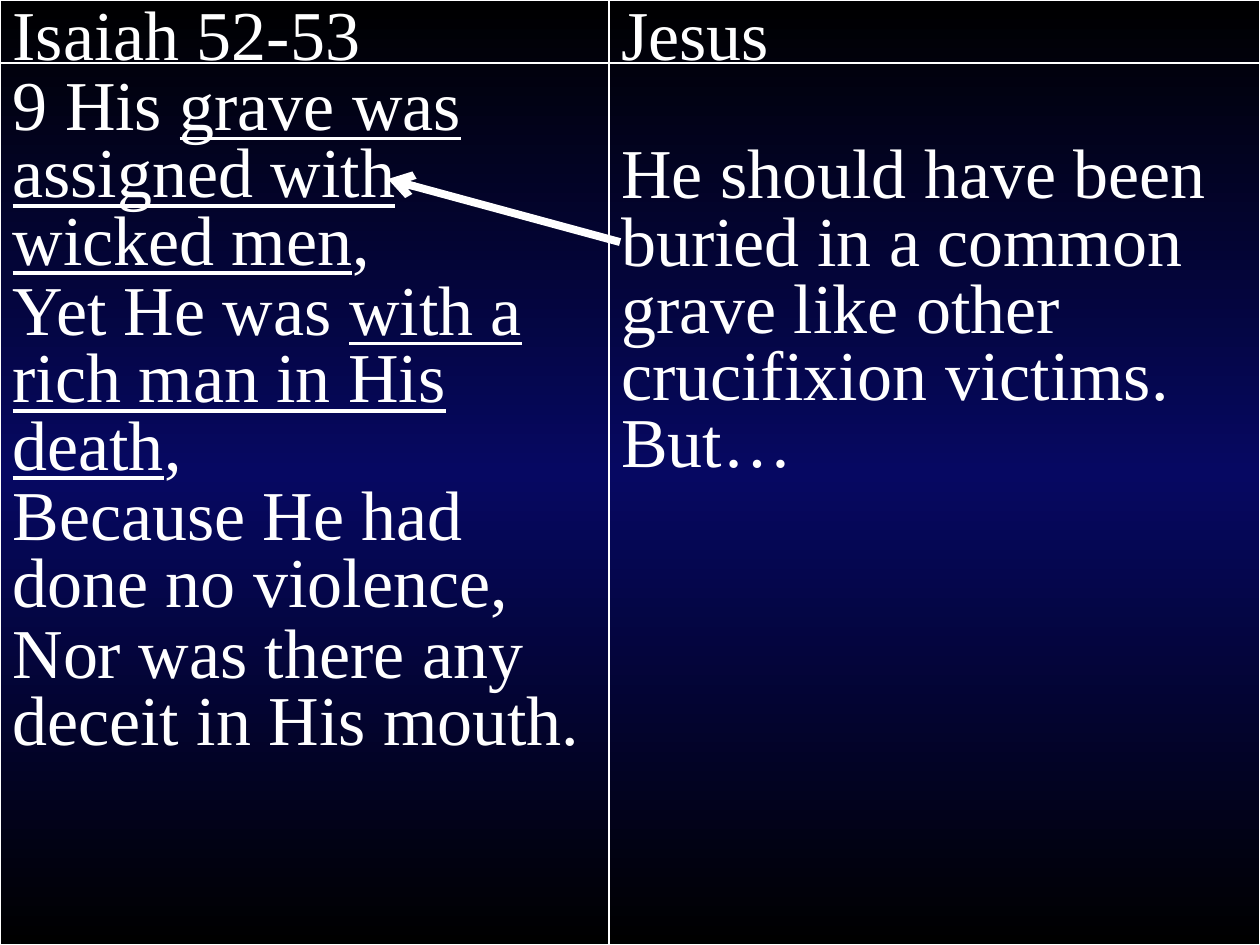
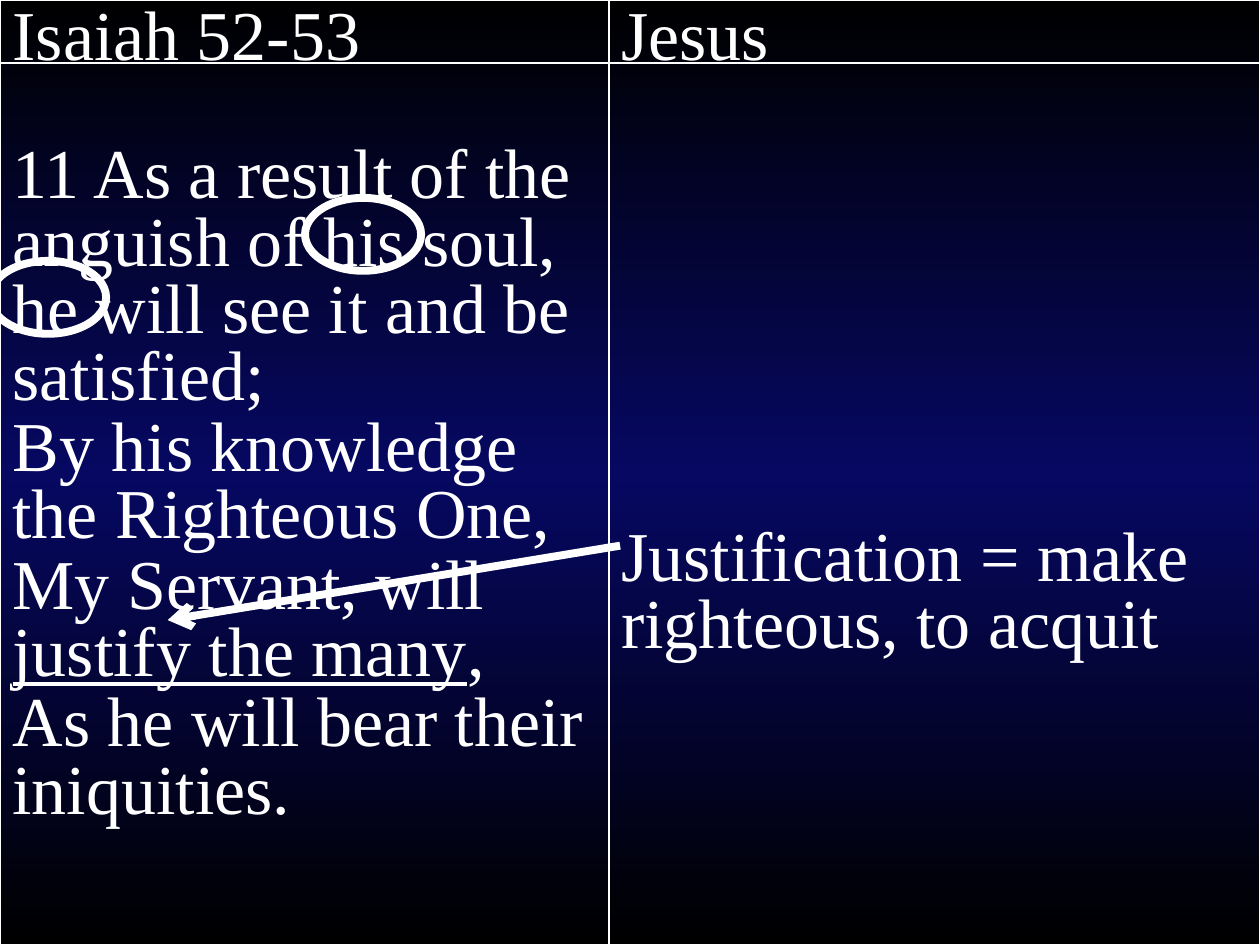
import copy
from dataclasses import dataclass

import lxml.etree
import pptx
import pptx.dml.color
import pptx.enum.shapes
import pptx.enum.text
import pptx.oxml.ns
import pptx.util

Cm = pptx.util.Cm
Pt = pptx.util.Pt
qn = pptx.oxml.ns.qn


@dataclass(frozen=True)
class Theme:
    font: str = "Times New Roman"
    text_size: float = 40
    line_spacing: float = 0.8
    paragraph_gap: float = 2
    line_pitch: float = 36.8
    ink: str = "FFFFFF"
    panel_gradient: tuple = ("000000", "060862", "000000")
    background_gradient: tuple = ("0000F8", "00004A")
    border: float = 1
    rule: float = 1.5
    marker: float = 4.5


THEME = Theme()
SLIDE_WIDTH, SLIDE_HEIGHT = 25.4, 19.05
SCRIPTURE_WIDTH = 12.5
JESUS_LEFT = 12.27
HEADING_RULE_Y = 1.27
CIRCLE_SIZE = (2.34, 1.47)


def rgb(code):
    return pptx.dml.color.RGBColor.from_string(code)


def paint_gradient(fill, owner, colours):
    """Fill from top to bottom with evenly spaced colours; owner is the XML holding the fill."""
    fill.gradient()
    fill.gradient_angle = 270
    stop_list = owner.find(".//" + qn("a:gsLst"))
    while len(stop_list) < len(colours):
        stop_list.append(copy.deepcopy(stop_list[0]))
    for index, (stop, colour) in enumerate(zip(fill.gradient_stops, colours)):
        stop.color.rgb = rgb(colour)
        stop.position = index / (len(colours) - 1)


def style_line(line, width):
    line.color.rgb = rgb(THEME.ink)
    line.width = Pt(width)


def write_paragraph(paragraph, pieces, skipped_lines=0):
    """Write (text, underlined) pieces, leaving room for skipped_lines above."""
    paragraph.alignment = pptx.enum.text.PP_ALIGN.LEFT
    paragraph.line_spacing = THEME.line_spacing
    paragraph.space_before = Pt(THEME.paragraph_gap + skipped_lines * THEME.line_pitch)
    properties = paragraph._p.get_or_add_pPr()
    properties.set("marL", "0")
    properties.set("indent", "0")
    lxml.etree.SubElement(properties, qn("a:buNone"))
    for text, underlined in pieces:
        run = paragraph.add_run()
        run.text = text
        run.font.name = THEME.font
        run.font.size = Pt(THEME.text_size)
        run.font.color.rgb = rgb(THEME.ink)
        run.font.underline = underlined


def fill_panel(panel, left, width, heading, verses, skipped_lines):
    """Turn a body placeholder into a full-height column with a heading."""
    panel.left, panel.top = Cm(left), Cm(0)
    panel.width, panel.height = Cm(width), Cm(SLIDE_HEIGHT)
    paint_gradient(panel.fill, panel.element, THEME.panel_gradient)
    style_line(panel.line, THEME.border)
    frame = panel.text_frame
    frame.word_wrap = True
    frame.auto_size = pptx.enum.text.MSO_AUTO_SIZE.NONE
    frame.vertical_anchor = pptx.enum.text.MSO_ANCHOR.TOP
    write_paragraph(frame.paragraphs[0], [(heading, False)])
    for index, verse in enumerate(verses):
        write_paragraph(frame.add_paragraph(), verse, 0 if index else skipped_lines)


def add_line(slide, start, end, width, arrow=False):
    connector = slide.shapes.add_connector(
        pptx.enum.shapes.MSO_CONNECTOR.STRAIGHT, *map(Cm, start + end))
    style_line(connector.line, width)
    if arrow:
        lxml.etree.SubElement(connector.line._get_or_add_ln(), qn("a:tailEnd"), type="arrow")
    lxml.etree.SubElement(connector._element.spPr, qn("a:effectLst"))


def add_circle(slide, left, top):
    circle = slide.shapes.add_shape(
        pptx.enum.shapes.MSO_SHAPE.OVAL, *map(Cm, (left, top) + CIRCLE_SIZE))
    circle.shadow.inherit = False
    circle.fill.background()
    style_line(circle.line, THEME.marker)


def add_comparison(deck, scripture, fulfilment, scripture_skip=0, fulfilment_skip=0):
    """Add a slide that sets the Isaiah text beside its fulfilment."""
    slide = deck.slides.add_slide(deck.slide_layouts.get_by_name("Two Content"))
    title = slide.shapes.title.element
    title.getparent().remove(title)
    scripture_panel, jesus_panel = slide.placeholders
    fill_panel(scripture_panel, 0, SCRIPTURE_WIDTH, "Isaiah 52-53", scripture, scripture_skip)
    fill_panel(jesus_panel, JESUS_LEFT, SLIDE_WIDTH - JESUS_LEFT, "Jesus",
               fulfilment, fulfilment_skip)
    add_line(slide, (0, HEADING_RULE_Y), (SLIDE_WIDTH, HEADING_RULE_Y), THEME.rule)
    return slide


def main():
    deck = pptx.Presentation()
    deck.slide_width, deck.slide_height = Cm(SLIDE_WIDTH), Cm(SLIDE_HEIGHT)
    master = deck.slide_master
    paint_gradient(master.background.fill, master.element, THEME.background_gradient)

    burial = add_comparison(
        deck,
        scripture=[
            [("9 His ", False), ("grave was assigned with wicked men", True), (",", False)],
            [("Yet He was ", False), ("with a rich man in His death", True), (",", False)],
            [("Because He had done no violence,", False)],
            [("Nor was there any deceit in His mouth.", False)],
        ],
        fulfilment=[[("He should have been buried in a common grave like other "
                      "crucifixion victims. But…", False)]],
        fulfilment_skip=1.06)
    add_line(burial, (SCRIPTURE_WIDTH, 4.88), (7.82, 3.61), THEME.marker, arrow=True)

    justification = add_comparison(
        deck,
        scripture=[
            [("11 As a result of the anguish of his soul, he will see it and be satisfied;",
              False)],
            [("By his knowledge the Righteous One,", False)],
            [("My Servant, will ", False), ("justify the many", True), (",", False)],
            [("As he will bear their iniquities.", False)],
        ],
        fulfilment=[[("Justification = make righteous, to acquit", False)]],
        scripture_skip=1.06,
        fulfilment_skip=7)
    add_circle(justification, -0.2, 5.26)
    add_circle(justification, 6.15, 3.99)
    add_line(justification, (SCRIPTURE_WIDTH, 11), (3.38, 12.5), THEME.marker, arrow=True)

    deck.save("out.pptx")


if __name__ == "__main__":
    main()
